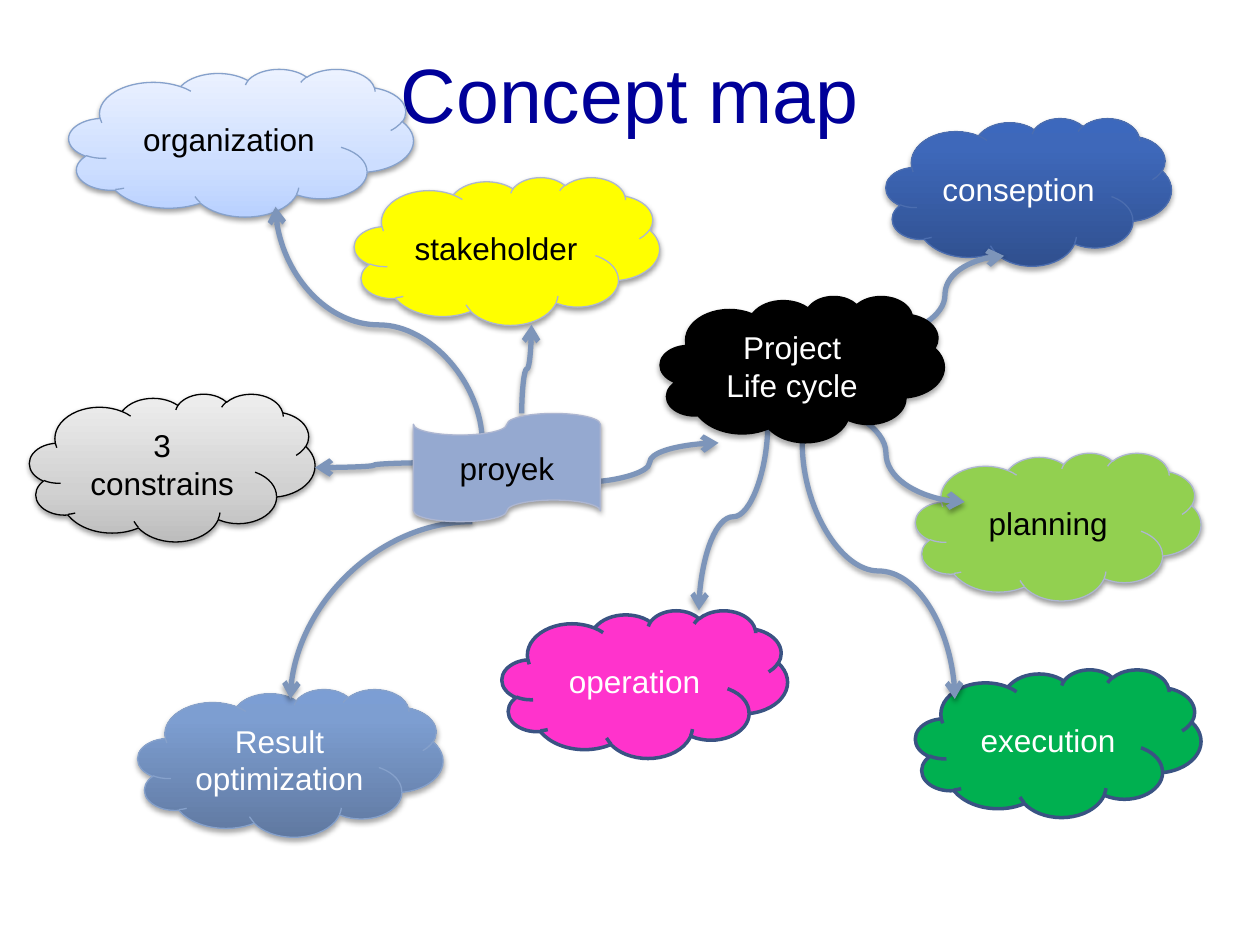
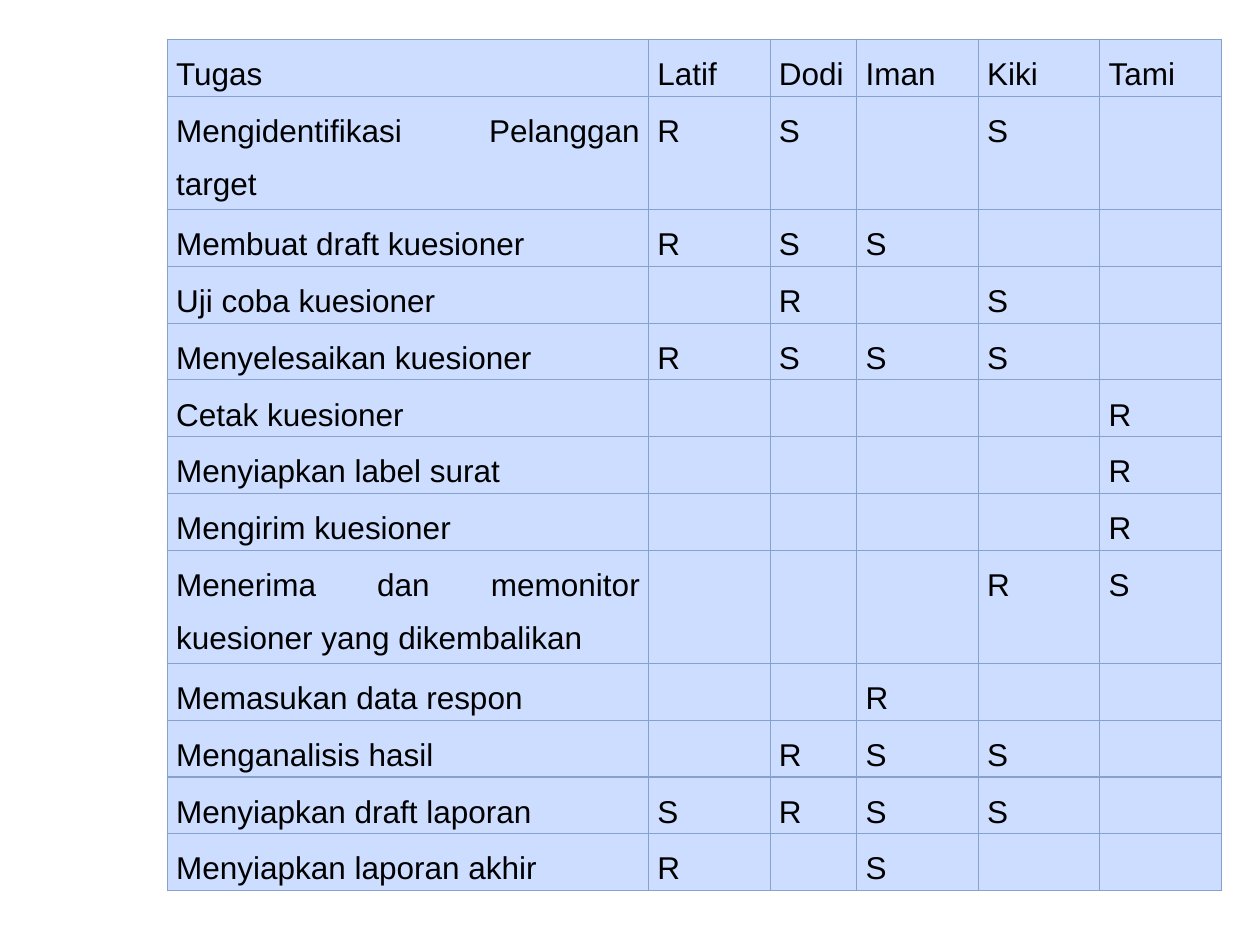
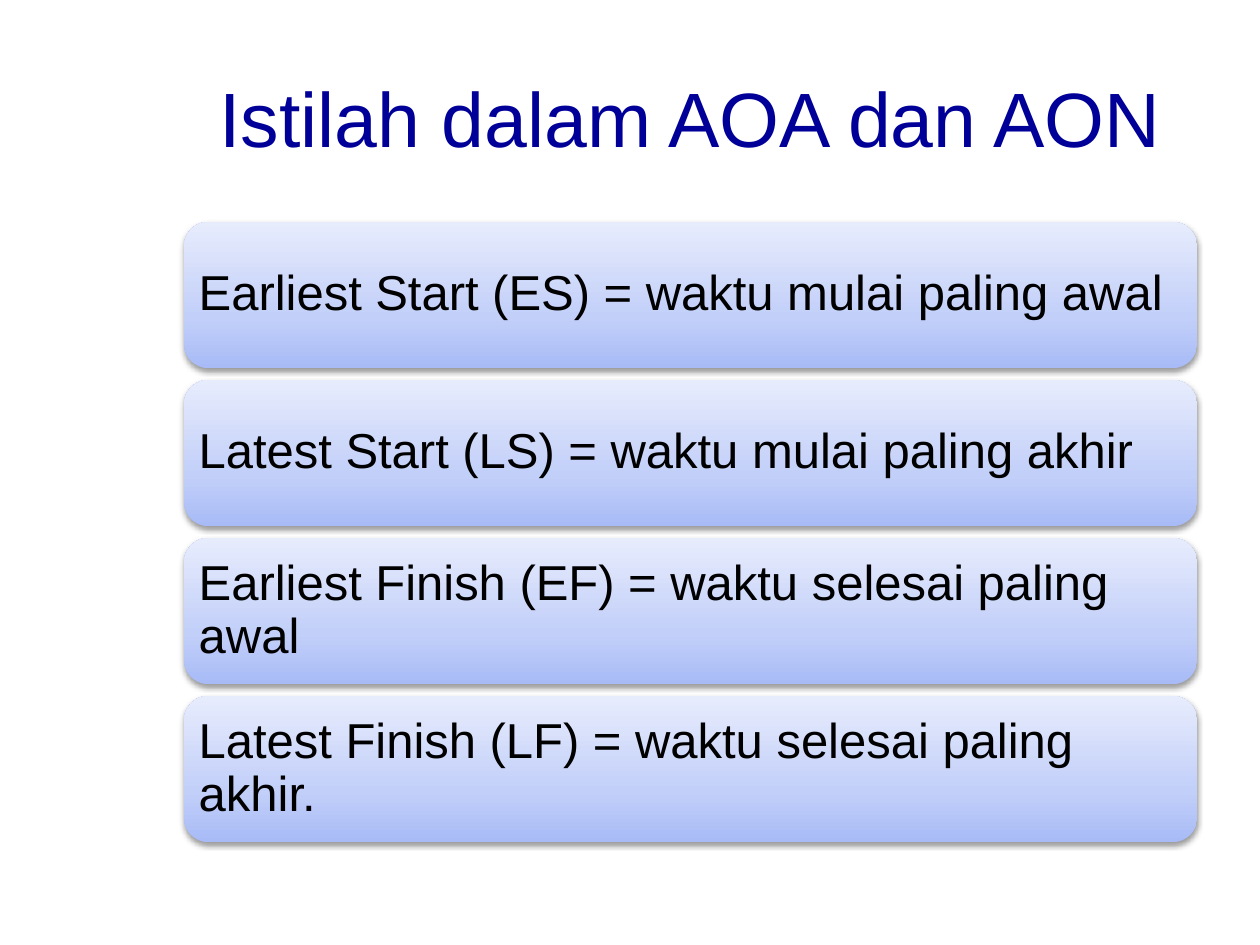
import lxml.etree
import pptx
import pptx.util
import pptx.dml.color
import pptx.enum.shapes
import pptx.enum.text
import pptx.oxml.ns

# Shared style: slide of 128 columns by 96 rows
CELL = 10 / 128
FONT = "Arial"
COLORS = {
    "title": "000099", "black": "000000", "white": "FFFFFF",
    "arrow": "7D95BA", "table": "CCDDFF", "blue_line": "86A1CB",
    "pale_line": "ADB6D1", "deep_line": "4B6DAF", "dark_line": "3A5383",
    "yellow": "FFFF00", "lime": "92D050", "green": "00B050",
    "pink": "FF33CC", "tape": "95A9D0",
}
GRADIENTS = {  # stops from bottom to top
    "gray": [(0, "BDBDBD"), (35, "D1D1D1"), (100, "EEEEEE")],
    "sky": [(0, "B9D1FF"), (35, "CDDEFF"), (100, "ECF2FF")],
    "royal": [(0, "30508F"), (80, "3E68BA"), (100, "3C68BD")],
    "steel": [(0, "6079A1"), (80, "7D9ED1"), (100, "7C9ED4")],
    "bar": [(0, "A8BBF7"), (35, "C2CFF8"), (100, "E7ECFD")],
}
SOFT = (38, 1.6)    # shadow opacity in percent, distance in points
STRONG = (35, 1.8)

ALIGN = pptx.enum.text.PP_ALIGN
ANCHOR = pptx.enum.text.MSO_ANCHOR
SHAPE = pptx.enum.shapes.MSO_SHAPE
qn = pptx.oxml.ns.qn


def grid(n):
    return pptx.util.Inches(n * CELL)


def rgb(name):
    return pptx.dml.color.RGBColor.from_string(COLORS[name])


def add(parent, tag, **attrs):
    """Append a DrawingML element and return it."""
    return lxml.etree.SubElement(
        parent, qn("a:" + tag), {k: str(v) for k, v in attrs.items()})


class Deck:
    def __init__(self):
        self.prs = pptx.Presentation()
        self.prs.slide_width, self.prs.slide_height = grid(128), grid(96)
        self.s = None

    def slide(self):
        self.s = self.prs.slides.add_slide(self.prs.slide_layouts[6])

    def put_text(self, tf, text, size, color, align, spacing=1.0):
        tf.word_wrap = True
        tf.text = text
        for p in tf.paragraphs:
            p.alignment, p.line_spacing = align, spacing
            p.font.name, p.font.size = FONT, pptx.util.Pt(size)
            p.font.color.rgb = rgb(color)

    def title(self, text, *box):
        tf = self.s.shapes.add_textbox(*map(grid, box)).text_frame
        tf.vertical_anchor = ANCHOR.MIDDLE
        self.put_text(tf, text, 44, "title", ALIGN.CENTER)

    def shadow(self, effects, opacity, distance):
        outer = add(effects, "outerShdw", blurRad=pptx.util.Pt(3.1),
                    dist=pptx.util.Pt(distance), dir=5400000, rotWithShape=0)
        color = add(outer, "srgbClr", val=COLORS["black"])
        add(color, "alpha", val=opacity * 1000)

    def fill(self, sp, name):
        if name in COLORS:
            sp.fill.solid()
            sp.fill.fore_color.rgb = rgb(name)
            return
        sp.fill.gradient()
        sp.fill.gradient_angle = 90
        stops = sp._element.spPr.find(qn("a:gradFill")).find(qn("a:gsLst"))
        for stop in list(stops):
            stops.remove(stop)
        for position, color in GRADIENTS[name]:
            add(add(stops, "gs", pos=position * 1000), "srgbClr", val=color)

    def shape(self, kind, box, fill, line=None, width=0.75, shadow=SOFT):
        sp = self.s.shapes.add_shape(kind, *map(grid, box))
        self.fill(sp, fill)
        if line:
            sp.line.color.rgb, sp.line.width = rgb(line), pptx.util.Pt(width)
        else:
            sp.line.fill.background()
        sp.shadow.inherit = False
        if shadow:
            self.shadow(sp._element.spPr.find(qn("a:effectLst")), *shadow)
        sp.text_frame.vertical_anchor = ANCHOR.MIDDLE
        return sp

    def node(self, text, box, fill, line=None, color="black", kind=SHAPE.CLOUD, **style):
        sp = self.shape(kind, box, fill, line, **style)
        self.put_text(sp.text_frame, text, 18, color, ALIGN.CENTER)

    def bar(self, text, box):
        tf = self.shape(SHAPE.ROUNDED_RECTANGLE, box, "bar").text_frame
        tf.margin_left = tf.margin_right = pptx.util.Inches(0.06)
        self.put_text(tf, text, 28, "black", ALIGN.LEFT, 0.9)

    def arrow(self, start, end, way):
        """Curved arrow; way is 'across', 'down' (leaves vertically) or 'quarter'."""
        (x1, y1), (x2, y2) = start, end
        if way == "down":  # lay the curve on its side, then turn it by 90 degrees
            cx, cy, dx, dy = (x1 + x2) / 2, (y1 + y2) / 2, (x2 - x1) / 2, (y2 - y1) / 2
            x1, y1, x2, y2 = cx - dy, cy + dx, cx + dy, cy - dx
        c = self.s.shapes.add_connector(
            pptx.enum.shapes.MSO_CONNECTOR.CURVE, *map(grid, (x1, y1, x2, y2)))
        c.line.color.rgb, c.line.width = rgb("arrow"), pptx.util.Pt(3)
        spPr = c._element.spPr
        if way == "down":
            spPr.find(qn("a:xfrm")).set("rot", "5400000")
        if way == "quarter":
            spPr.find(qn("a:prstGeom")).set("prst", "curvedConnector2")
        add(spPr.find(qn("a:ln")), "tailEnd", type="arrow")
        self.shadow(add(spPr, "effectLst"), *STRONG)

    def cell(self, cell, text):
        tcPr = cell._tc.get_or_add_tcPr()
        for side in ("lnL", "lnR", "lnT", "lnB"):
            border = add(tcPr, side, w=pptx.util.Pt(0.75))
            add(add(border, "solidFill"), "srgbClr", val=COLORS["blue_line"])
        cell.fill.solid()
        cell.fill.fore_color.rgb = rgb("table")
        cell.margin_left = cell.margin_right = pptx.util.Inches(0.07)
        cell.margin_top = cell.margin_bottom = 0
        self.put_text(cell.text_frame, text, 18, "black", ALIGN.JUSTIFY, 1.5)

    def table(self, x, y, widths, heights, rows):
        frame = self.s.shapes.add_table(
            len(rows), len(widths), *map(grid, (x, y, sum(widths), sum(heights))))
        t = frame.table
        t.first_row = t.horz_banding = False
        for column, w in zip(t.columns, widths):
            column.width = grid(w)
        for row, h, texts in zip(t.rows, heights, rows):
            row.height = grid(h)
            for cell, text in zip(row.cells, texts):
                self.cell(cell, text)


def concept_map(d):
    d.slide()
    d.title("Concept map", 6.4, 3.84, 115.2, 11.14)

    # Clouds
    d.node("3 constrains", (3, 40, 29, 15), "gray", "black")
    d.node("organization", (7, 7, 35, 15), "sky", "blue_line")
    d.node("stakeholder", (36, 18, 31, 15), "yellow", "pale_line")
    d.node("conseption", (90, 12, 29, 15), "royal", "deep_line", "white", shadow=STRONG)
    d.node("planning", (93, 46, 29, 15), "lime", "pale_line")
    d.node("execution", (93, 68, 29, 15), "green", "dark_line", "white", width=2, shadow=None)
    d.node("operation", (51, 62, 29, 15), "pink", "dark_line", "white", width=2, shadow=None)
    d.node("Result\noptimization", (14, 70, 31, 15), "steel", "blue_line", "white",
           shadow=STRONG)

    # Arrows
    for start, end, way in (
        ((53, 42), (54, 33), "down"),
        ((59, 49), (73, 45), "across"),
        ((44, 47), (32, 47.5), "across"),
        ((49, 45), (28, 21), "down"),
        ((90, 34), (102, 26), "across"),
        ((82, 41), (98, 51), "across"),
        ((81.5, 45), (97, 71), "down"),
        ((78, 43), (71, 62), "down"),
        ((48, 53), (29.5, 71), "quarter"),
    ):
        d.arrow(start, end, way)

    # Hubs over the arrow ends
    d.node("proyek", (42, 42, 19, 11), "tape", "pale_line", kind=SHAPE.FLOWCHART_PUNCHED_TAPE)
    d.node("Project\nLife cycle", (67, 30, 29, 15), "black", color="white", shadow=STRONG)


def task_table(d):
    d.slide()
    tasks = (  # one mark per person, "-" for none
        ("Mengidentifikasi Pelanggan target", "RS-S-"),
        ("Membuat draft kuesioner", "RSS--"),
        ("Uji coba kuesioner", "-R-S-"),
        ("Menyelesaikan kuesioner", "RSSS-"),
        ("Cetak kuesioner", "----R"),
        ("Menyiapkan label surat", "----R"),
        ("Mengirim kuesioner", "----R"),
        ("Menerima dan memonitor kuesioner yang dikembalikan", "---RS"),
        ("Memasukan data respon", "--R--"),
        ("Menganalisis hasil", "-RSS-"),
        ("Menyiapkan draft laporan", "SRSS-"),
        ("Menyiapkan laporan akhir", "R-S--"),
    )
    rows = [("Tugas", "Latif", "Dodi", "Iman", "Kiki", "Tami")]
    rows += [(task, *(m.strip("-") for m in marks)) for task, marks in tasks]
    heights = [5.64] * len(rows)
    heights[8] *= 2
    d.table(17, 4, (48.9, 12.35, 8.8, 12.35, 12.35, 12.35), heights, rows)


def terms(d):
    d.slide()
    left, width = 18.7, 102.9
    d.title("Istilah dalam AOA dan AON", left, 3.84, width, 16)
    for i, text in enumerate((
        "Earliest Start (ES) = waktu mulai paling awal",
        "Latest Start (LS) = waktu mulai paling akhir",
        "Earliest Finish (EF) = waktu selesai paling awal",
        "Latest Finish (LF) = waktu selesai paling akhir.",
    )):
        d.bar(text, (left, 22.55 + 16.05 * i, width, 14.85))


def main():
    d = Deck()
    concept_map(d)
    task_table(d)
    terms(d)
    d.prs.save("out.pptx")


if __name__ == "__main__":
    main()
